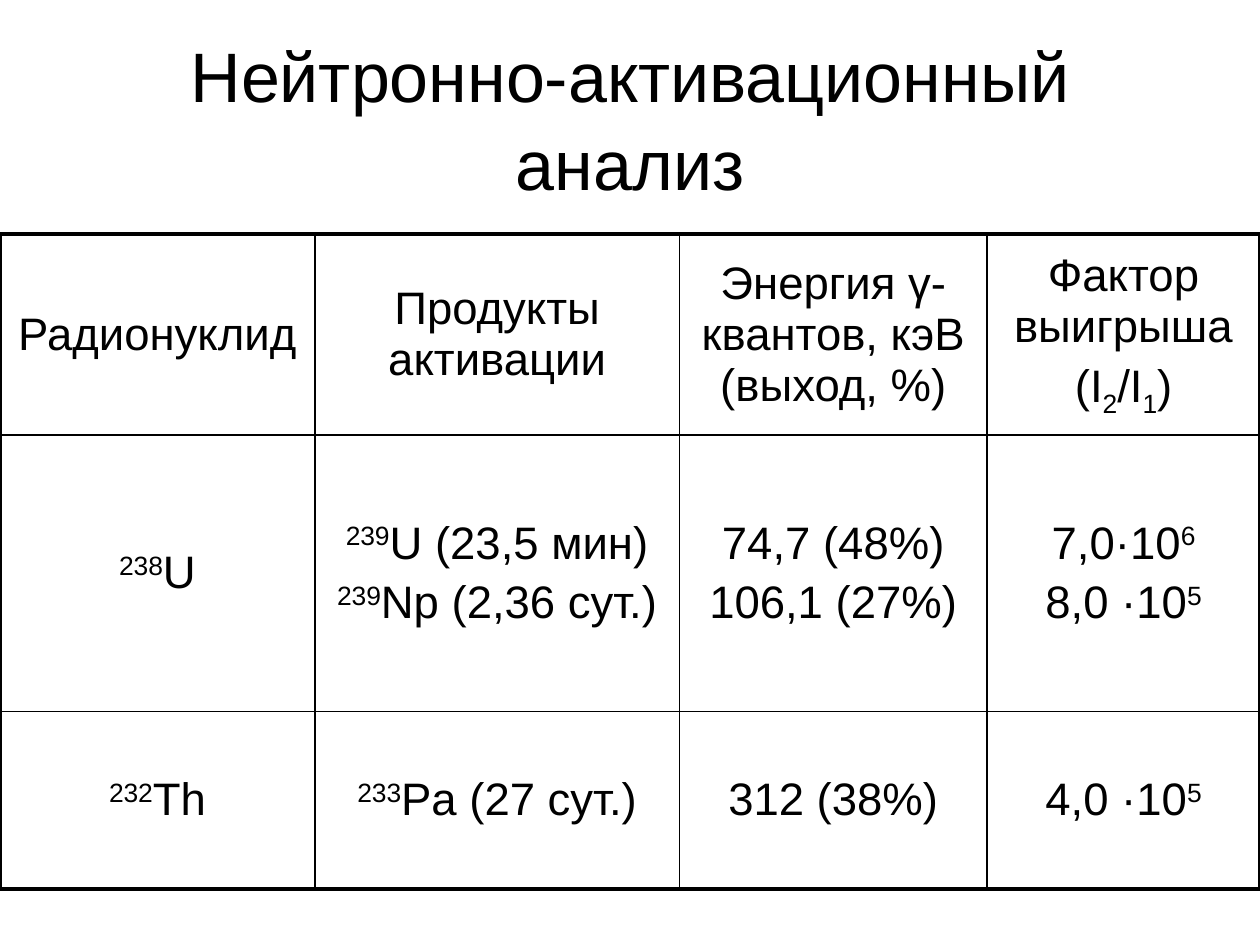
"""Build a slide with a table of neutron activation analysis results."""
from lxml import etree
from pptx import Presentation
from pptx import util as u
from pptx.dml.color import RGBColor
from pptx.enum import text
from pptx.oxml import ns

BLACK = RGBColor(0, 0, 0)
INNER_LINE, OUTER_LINE = u.Pt(1), u.Pt(2.25)
BASELINES = {"^": "30000", "_": "-25000"}
TITLE_FORMAT = {"name": "Arial", "size": u.Pt(40)}
CELL_FORMAT = {"name": "Arial", "size": u.Pt(26)}
COLUMN_WIDTHS = [6.35, 7.35, 6.2, 5.5]
ROW_HEIGHTS = [4.05, 5.57, 3.58]
ROWS = [
    [["Радионуклид"], ["Продукты активации"],
     ["Энергия γ-квантов, кэВ (выход, %)"],
     ["Фактор выигрыша", "(I|_2|/I|_1|)"]],
    [["^238|U"], ["^239|U (23,5 мин)", "^239|Np (2,36 сут.)"],
     ["74,7 (48%)", "106,1 (27%)"], ["7,0·10|^6", "8,0 ·10|^5"]],
    [["^232|Th"], ["^233|Pa (27 сут.)"], ["312 (38%)"], ["4,0 ·10|^5"]],
]


def add_run(paragraph, piece, font_format):
    run = paragraph.add_run()
    run.text = piece.lstrip("^_")
    for name, value in font_format.items():
        setattr(run.font, name, value)
    run.font.color.rgb = BLACK
    if piece[0] in BASELINES:
        run.font._element.set("baseline", BASELINES[piece[0]])


def write_paragraphs(frame, lines, font_format, paragraph_format):
    frame.word_wrap = True
    for index, line in enumerate(lines):
        paragraph = frame.add_paragraph() if index else frame.paragraphs[0]
        paragraph.alignment = text.PP_ALIGN.CENTER
        for name, value in paragraph_format.items():
            setattr(paragraph, name, value)
        for piece in line.split("|"):
            add_run(paragraph, piece, font_format)


def add_title(slide, title):
    shape = slide.shapes.add_textbox(u.Cm(1.27), u.Cm(0.76), u.Cm(22.86), u.Cm(3.18))
    shape.text_frame.vertical_anchor = text.MSO_ANCHOR.MIDDLE
    write_paragraphs(shape.text_frame, [title], TITLE_FORMAT, {"line_spacing": 1.05})


def set_borders(cell, widths):
    properties = cell._tc.get_or_add_tcPr()
    for index, (side, width) in enumerate(widths.items()):
        line = etree.Element(ns.qn(f"a:ln{side}"), w=str(width))
        fill = etree.SubElement(line, ns.qn("a:solidFill"))
        etree.SubElement(fill, ns.qn("a:srgbClr"), val=str(BLACK))
        properties.insert(index, line)


def add_table(slide):
    row_count, column_count = len(ROW_HEIGHTS), len(COLUMN_WIDTHS)
    table = slide.shapes.add_table(
        row_count, column_count, u.Cm(0), u.Cm(4.72),
        u.Cm(sum(COLUMN_WIDTHS)), u.Cm(sum(ROW_HEIGHTS))).table
    table.first_row = table.horz_banding = False
    for column, width in zip(table.columns, COLUMN_WIDTHS):
        column.width = u.Cm(width)
    for row, height in zip(table.rows, ROW_HEIGHTS):
        row.height = u.Cm(height)
    for row_index, row in enumerate(ROWS):
        for column_index, lines in enumerate(row):
            cell = table.cell(row_index, column_index)
            cell.vertical_anchor = text.MSO_ANCHOR.MIDDLE
            cell.fill.background()
            write_paragraphs(cell.text_frame, lines, CELL_FORMAT,
                             {"space_before": u.Pt(5.2)})
            is_outer = {"L": column_index == 0, "R": column_index == column_count - 1,
                        "T": row_index == 0, "B": row_index == row_count - 1}
            set_borders(cell, {side: OUTER_LINE if outer else INNER_LINE
                               for side, outer in is_outer.items()})


def main():
    presentation = Presentation()
    presentation.slide_width, presentation.slide_height = u.Cm(25.4), u.Cm(19.05)
    slide = presentation.slides.add_slide(presentation.slide_layouts[6])
    add_title(slide, "Нейтронно-активационный анализ")
    add_table(slide)
    presentation.save("out.pptx")


if __name__ == "__main__":
    main()
